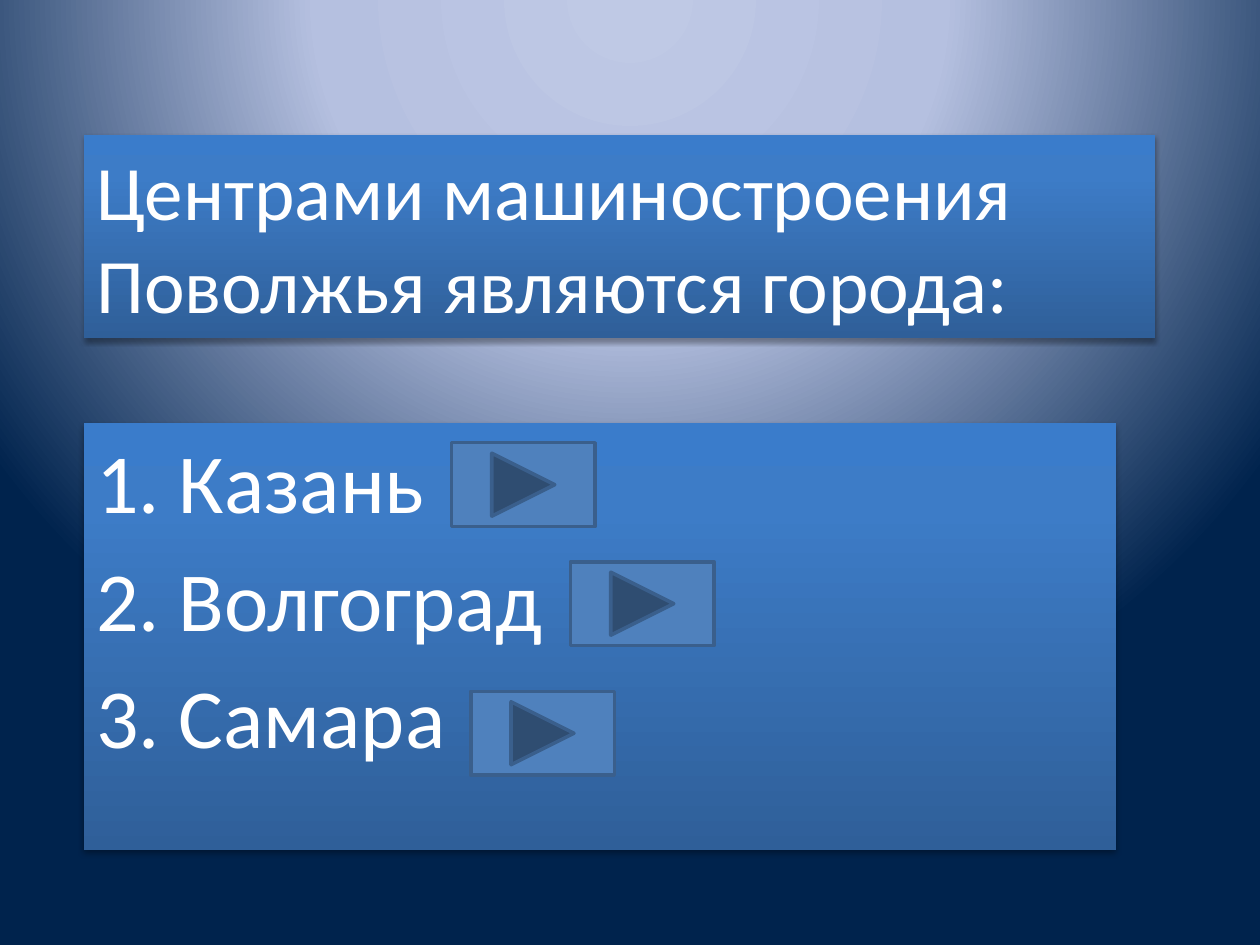
from lxml import etree
from pptx import Presentation
from pptx.dml.color import RGBColor
from pptx.enum.shapes import MSO_SHAPE
from pptx.enum.text import MSO_ANCHOR, PP_ALIGN
from pptx.oxml.ns import qn
from pptx.util import Pt

RECT = MSO_SHAPE.RECTANGLE
NEXT_BUTTON = MSO_SHAPE.ACTION_BUTTON_FORWARD_OR_NEXT
TOP, MIDDLE = MSO_ANCHOR.TOP, MSO_ANCHOR.MIDDLE
LEFT = PP_ALIGN.LEFT

WHITE = RGBColor(0xFF, 0xFF, 0xFF)
BLACK = RGBColor(0x00, 0x00, 0x00)
BUTTON_FILL = RGBColor(0x4F, 0x81, 0xBD)
BUTTON_LINE = RGBColor(0x3A, 0x5F, 0x8C)
PANEL_STOPS = [
    (0, RGBColor(0x2F, 0x5F, 0x99)),
    (80, RGBColor(0x3D, 0x7C, 0xC7)),
    (100, RGBColor(0x3A, 0x7C, 0xCB)),
]
BACK_STOPS = [
    (0, RGBColor(0xBF, 0xC9, 0xE5)),
    (40, RGBColor(0xB5, 0xC0, 0xE0)),
    (100, RGBColor(0x00, 0x23, 0x4D)),
]

FONT = "Calibri"
QUESTION = ["Центрами машиностроения Поволжья являются города:"]
ANSWERS = ["1. Казань", "2. Волгоград", "3. Самара"]
QUESTION_BOX = (48, 77, 612, 116)
ANSWER_BOX = (48, 242, 590, 244)
BUTTON_SIZE = (82, 48)
BUTTON_SPOTS = [(258, 253), (326, 321), (269, 395)]


def add_node(parent, tag, **attrs):
    node = etree.SubElement(parent, qn(tag))
    for name, value in attrs.items():
        node.set(name, str(value))
    return node


def set_gradient(fill, parent, stops):
    fill.solid()
    solid = parent.find(qn("a:solidFill"))
    grad = etree.Element(qn("a:gradFill"), rotWithShape="1")
    gs_list = add_node(grad, "a:gsLst")
    for pos, color in stops:
        gs = add_node(gs_list, "a:gs", pos=pos * 1000)
        add_node(gs, "a:srgbClr", val=color)
    parent.replace(solid, grad)
    return grad


def add_shape(s, kind, box):
    sp = s.shapes.add_shape(kind, *[Pt(v) for v in box])
    sp.shadow.inherit = False
    return sp


def add_text(sp, lines, size, anchor=TOP, before=0):
    tf = sp.text_frame
    tf.word_wrap = True
    tf.vertical_anchor = anchor
    for i, line in enumerate(lines):
        p = tf.paragraphs[0] if i == 0 else tf.add_paragraph()
        p.alignment = LEFT
        p.space_before = Pt(before)
        r = p.add_run()
        r.text = line
        r.font.name = FONT
        r.font.size = Pt(size)
        r.font.color.rgb = WHITE


def add_panel(s, box, lines, **text_format):
    sp = add_shape(s, RECT, box)
    sp.line.fill.background()
    props = sp.element.spPr
    grad = set_gradient(sp.fill, props, PANEL_STOPS)
    add_node(grad, "a:lin", ang=270 * 60000, scaled=0)
    shadow = add_node(props.find(qn("a:effectLst")), "a:outerShdw",
                      blurRad=Pt(3.1), dist=Pt(1.8), dir=90 * 60000, rotWithShape=0)
    color = add_node(shadow, "a:srgbClr", val=BLACK)
    add_node(color, "a:alpha", val=35000)
    add_text(sp, lines, **text_format)


def add_button(s, spot):
    sp = add_shape(s, NEXT_BUTTON, spot + BUTTON_SIZE)
    sp.fill.solid()
    sp.fill.fore_color.rgb = BUTTON_FILL
    sp.line.color.rgb = BUTTON_LINE
    sp.line.width = Pt(2)


def set_background(s):
    fill = s.background.fill
    fill.solid()
    props = s.element.find(".//" + qn("p:bgPr"))
    grad = set_gradient(fill, props, BACK_STOPS)
    circle = add_node(grad, "a:path", path="circle")
    add_node(circle, "a:fillToRect", l=50000, t=-80000, r=50000, b=180000)


def main():
    prs = Presentation()
    prs.slide_width, prs.slide_height = Pt(720), Pt(540)
    s = prs.slides.add_slide(prs.slide_layouts[6])
    set_background(s)
    add_panel(s, QUESTION_BOX, QUESTION, size=44, anchor=MIDDLE)
    add_panel(s, ANSWER_BOX, ANSWERS, size=48, before=9.6)
    for spot in BUTTON_SPOTS:
        add_button(s, spot)
    prs.save("out.pptx")


if __name__ == "__main__":
    main()
